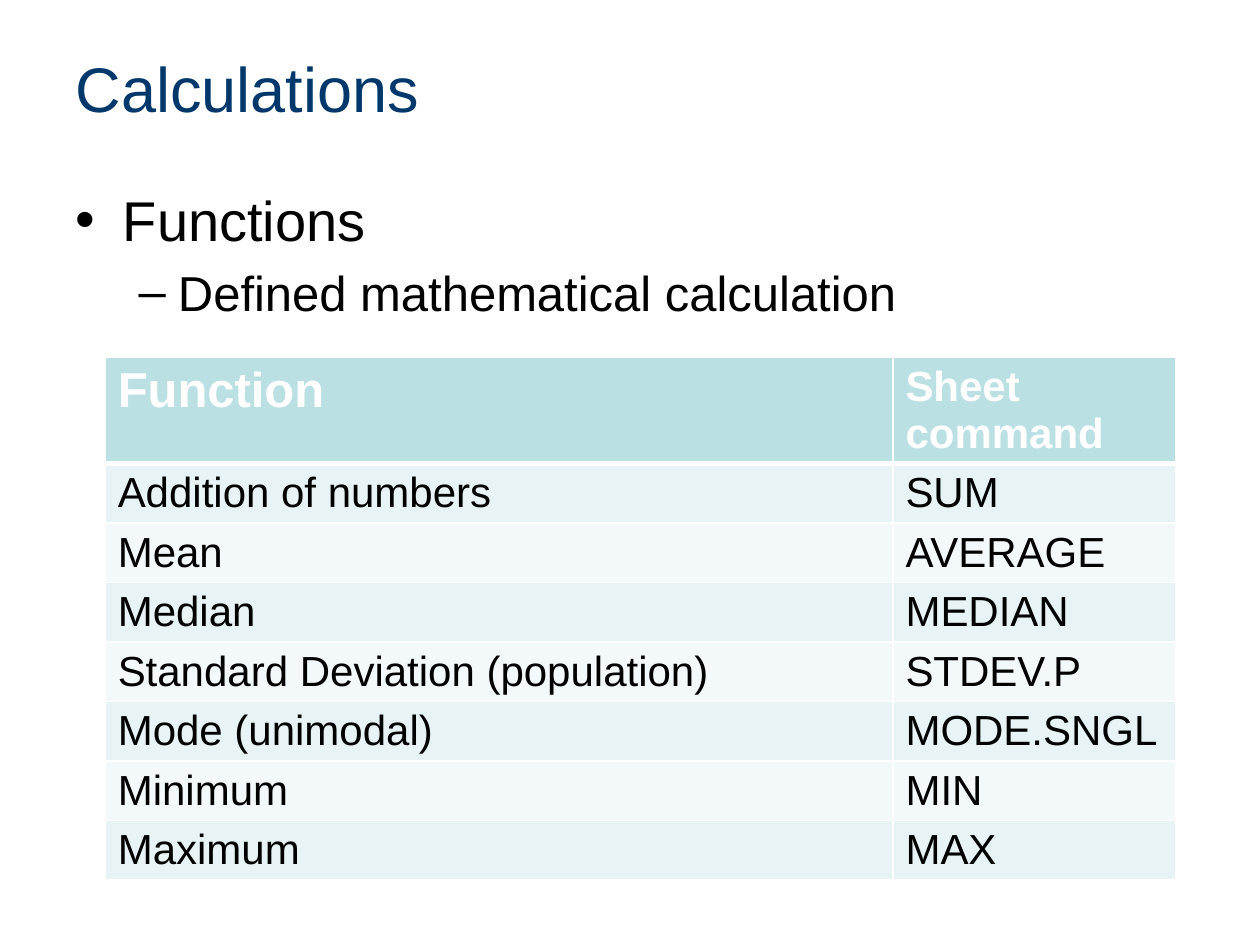
from dataclasses import dataclass

from lxml import etree
from pptx import Presentation
from pptx.dml.color import RGBColor
from pptx.enum import text
from pptx.oxml import ns
from pptx.util import Cm, Pt


@dataclass(frozen=True)
class Theme:
    font: str = "Arial"
    title: str = "00386B"
    ink: str = "000000"
    white: str = "FFFFFF"
    header: str = "BBE0E3"
    bands: tuple = ("E7F3F4", "F3F9FA")
    title_size: int = 36
    body_sizes: tuple = (32, 28)
    header_sizes: tuple = (28, 24)
    cell_size: int = 24


theme = Theme()


def add_run(paragraph, wording, size, color, bold=False):
    run = paragraph.add_run()
    run.text = wording
    run.font.name = theme.font
    run.font.size = Pt(size)
    run.font.bold = bold
    run.font.color.rgb = RGBColor.from_string(color)


def add_border(cell, side, width):
    line = etree.SubElement(cell._tc.get_or_add_tcPr(), ns.qn(f"a:ln{side}"), w=str(Pt(width)))
    fill = etree.SubElement(line, ns.qn("a:solidFill"))
    etree.SubElement(fill, ns.qn("a:srgbClr"), val=theme.white)


deck = Presentation()
deck.slide_width, deck.slide_height = Cm(25.4), Cm(19.05)
slide = deck.slides.add_slide(deck.slide_layouts[1])

heading = slide.shapes.title
heading.left, heading.top, heading.width, heading.height = Cm(1.27), Cm(0.76), Cm(22.86), Cm(1.98)
heading.text_frame.vertical_anchor = text.MSO_ANCHOR.MIDDLE
heading_line = heading.text_frame.paragraphs[0]
heading_line.alignment = text.PP_ALIGN.LEFT
add_run(heading_line, "Calculations", theme.title_size, theme.title)

outline = slide.placeholders[1]
outline.left, outline.top, outline.width, outline.height = Cm(1.27), Cm(3.61), Cm(22.86), Cm(13.41)
topic = outline.text_frame.paragraphs[0]
definition = outline.text_frame.add_paragraph()
definition.level = 1
add_run(topic, "Functions", theme.body_sizes[0], theme.ink)
add_run(definition, "Defined mathematical calculation", theme.body_sizes[1], theme.ink)

commands = [
    ("Function", "Sheet command"),
    ("Addition of numbers", "SUM"),
    ("Mean", "AVERAGE"),
    ("Median", "MEDIAN"),
    ("Standard Deviation (population)", "STDEV.P"),
    ("Mode (unimodal)", "MODE.SNGL"),
    ("Minimum", "MIN"),
    ("Maximum", "MAX"),
]
header_height, row_height = Cm(2.11), Cm(1.2)
table_height = header_height + row_height * (len(commands) - 1)
function_table = slide.shapes.add_table(
    len(commands), 2, Cm(2.12), Cm(7.2), Cm(21.59), table_height
).table
function_table.columns[0].width = Cm(15.88)
function_table.columns[1].width = Cm(5.71)

for r, entries in enumerate(commands):
    is_header = r == 0
    function_table.rows[r].height = header_height if is_header else row_height
    for c, entry in enumerate(entries):
        cell = function_table.cell(r, c)
        for side in "LRTB":
            under_header = (r, side) in ((0, "B"), (1, "T"))
            add_border(cell, side, 3 if under_header else 1)
        cell.fill.solid()
        shade = theme.header if is_header else theme.bands[(r - 1) % 2]
        cell.fill.fore_color.rgb = RGBColor.from_string(shade)
        size = theme.header_sizes[c] if is_header else theme.cell_size
        ink = theme.white if is_header else theme.ink
        add_run(cell.text_frame.paragraphs[0], entry, size, ink, is_header)

deck.save("out.pptx")
